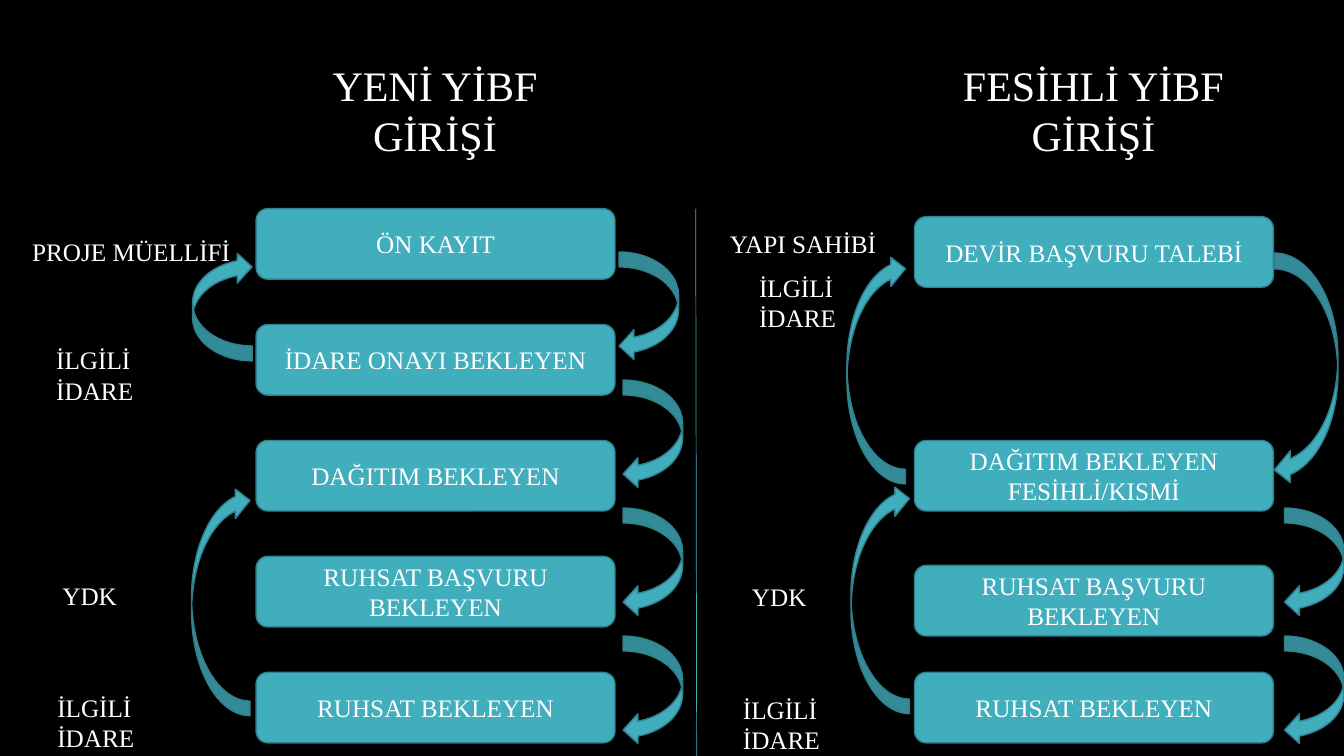
from lxml import etree
from pptx import Presentation, util as u
from pptx.dml.color import RGBColor
from pptx.enum import shapes, text
from pptx.oxml.ns import qn

COLORS = {"back": "000000", "text": "FFFFFF", "teal": "41AEBD", "edge": "30818C"}
FONT = "Times New Roman"
SLIDE_W, SLIDE_H = 13.33, 7.5
COLUMN_W = 6.53
STEP_X, STEP_W, STEP_H = 2.54, 3.56, 0.7
ROW_TOP, ROW_GAP = 2.07, 1.15
ARROW_TOP, ARROW_GAP = 2.5, 1.27
ARROW_W, ARROW_H = 0.59, 1.08


def color(name):
    return RGBColor.from_string(COLORS[name])


def row(n):
    return ROW_TOP + n * ROW_GAP


def arrow_row(n):
    return ARROW_TOP + n * ARROW_GAP


def write(sp, words, size, align, anchor):
    tf = sp.text_frame
    tf.text = words
    tf.word_wrap = True
    tf.auto_size = text.MSO_AUTO_SIZE.NONE
    tf.vertical_anchor = anchor
    p = tf.paragraphs[0]
    p.alignment = align
    p.font.name = FONT
    p.font.size = u.Pt(size)
    p.font.color.rgb = color("text")


def add_shape(s, kind, x, y, w, h):
    sp = s.shapes.add_shape(kind, u.Inches(x), u.Inches(y), u.Inches(w), u.Inches(h))
    sp.shadow.inherit = False
    sp.fill.solid()
    sp.fill.fore_color.rgb = color("teal")
    sp.line.color.rgb = color("edge")
    sp.line.width = u.Pt(1)
    return sp


def add_heading(sp, words, left):
    sp.left, sp.top = u.Inches(left + 2.91), u.Inches(0.54)
    sp.width, sp.height = u.Inches(2.81), u.Inches(1.11)
    write(sp, words, 30, text.PP_ALIGN.CENTER, text.MSO_ANCHOR.TOP)


def add_column(s, left, steps, labels, forward, back):
    for words, y in steps:
        sp = add_shape(s, shapes.MSO_SHAPE.ROUNDED_RECTANGLE, left + STEP_X, y, STEP_W, STEP_H)
        write(sp, words, 18, text.PP_ALIGN.CENTER, text.MSO_ANCHOR.MIDDLE)
    for words, x, y, w, h in labels:
        sp = s.shapes.add_textbox(u.Inches(left + x), u.Inches(y), u.Inches(w), u.Inches(h))
        write(sp, words, 18, text.PP_ALIGN.LEFT, text.MSO_ANCHOR.TOP)
    for arrows, turn in ((forward, 0), (back, 180)):
        for x, y, w, h in arrows:
            sp = add_shape(s, shapes.MSO_SHAPE.CURVED_LEFT_ARROW, left + x, y, w, h)
            sp.rotation = turn


def add_divider(s):
    line = s.shapes.add_connector(shapes.MSO_CONNECTOR.STRAIGHT, u.Inches(6.9), u.Inches(ROW_TOP),
                                  u.Inches(6.91), u.Inches(7.52))
    line.line.color.rgb = color("teal")
    line.line.width = u.Pt(0.5)
    etree.SubElement(line._element.spPr, qn("a:effectLst"))


def main():
    prs = Presentation()
    prs.slide_width, prs.slide_height = u.Inches(SLIDE_W), u.Inches(SLIDE_H)
    s = prs.slides.add_slide(prs.slide_layouts[5])
    s.background.fill.solid()
    s.background.fill.fore_color.rgb = color("back")

    add_heading(s.shapes.title, "YENİ YİBF GİRİŞİ", 0)
    add_heading(s.shapes.add_textbox(0, 0, 0, 0), "FESİHLİ YİBF GİRİŞİ", COLUMN_W)

    new_steps = ["ÖN KAYIT", "İDARE ONAYI BEKLEYEN", "DAĞITIM BEKLEYEN",
                 "RUHSAT BAŞVURU BEKLEYEN", "RUHSAT BEKLEYEN"]
    add_column(
        s, 0,
        [(words, row(n)) for n, words in enumerate(new_steps)],
        [("PROJE MÜELLİFİ", 0.22, 2.3, 2.25, 0.4),
         ("İLGİLİ İDARE", 0.46, 3.37, 1.53, 0.71),
         ("YDK", 0.52, 5.71, 1.38, 0.4),
         ("İLGİLİ İDARE", 0.47, 6.82, 1.7, 0.71)],
        [(6.18 if n else 6.14, arrow_row(n), ARROW_W, ARROW_H) for n in range(4)],
        [(1.91, ARROW_TOP, ARROW_W, ARROW_H), (1.9, 4.82, 0.58, 2.28)])

    add_column(
        s, COLUMN_W,
        [("DEVİR BAŞVURU TALEBİ", 2.15),
         ("DAĞITIM BEKLEYEN FESİHLİ/KISMİ", row(2)),
         ("RUHSAT BAŞVURU BEKLEYEN", 5.61),
         ("RUHSAT BEKLEYEN", row(4))],
        [("YAPI SAHİBİ", 0.61, 2.22, 1.69, 0.4),
         ("İLGİLİ İDARE", 0.9, 2.65, 1.69, 1.01),
         ("YDK", 0.83, 5.72, 1.38, 0.4),
         ("İLGİLİ İDARE", 0.74, 6.84, 1.7, 0.71)],
        [(6.11, 2.51, 0.63, 2.31)]
        + [(6.21, arrow_row(n), ARROW_W, ARROW_H) for n in (2, 3)],
        [(1.91, 4.8, 0.58, 2.28), (1.87, 2.52, 0.58, 2.28)])

    add_divider(s)
    prs.save("out.pptx")


if __name__ == "__main__":
    main()
